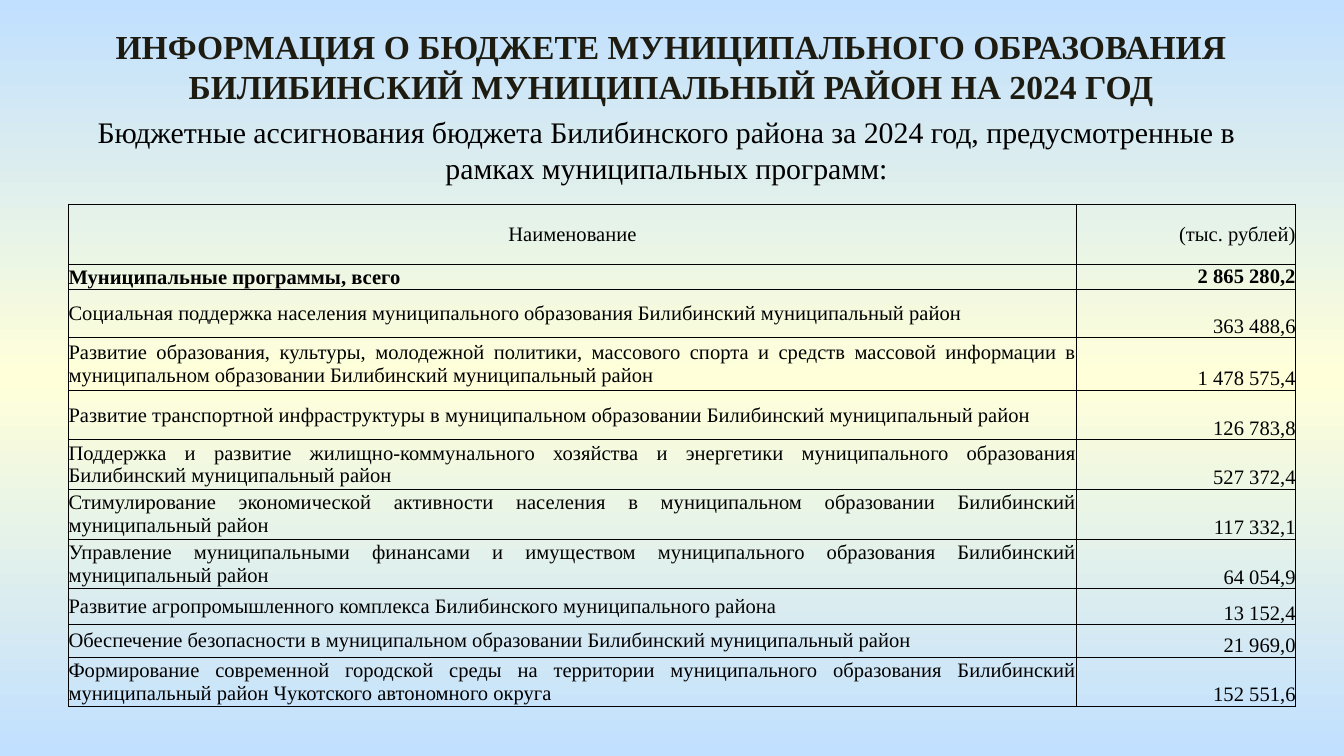
from copy import deepcopy

from lxml.etree import SubElement
from pptx import Presentation
from pptx.dml.color import RGBColor
from pptx.enum.text import MSO_ANCHOR as ANCHOR, MSO_AUTO_SIZE as AUTO, PP_ALIGN as AL
from pptx.oxml.ns import qn
from pptx.util import Inches, Pt

# Content
TITLE = ("ИНФОРМАЦИЯ О БЮДЖЕТЕ МУНИЦИПАЛЬНОГО ОБРАЗОВАНИЯ "
         "БИЛИБИНСКИЙ МУНИЦИПАЛЬНЫЙ РАЙОН НА 2024 ГОД")
SUBTITLE = ("Бюджетные ассигнования бюджета Билибинского района за 2024 год, "
            "предусмотренные в рамках муниципальных программ:")
HEADER = ("Наименование", "(тыс. рублей)", 0.45)
TOTAL = ("Муниципальные программы, всего", "2 865 280,2", 0.18)
# Programme, amount, row height
PROGRAMMES = [
    ("Социальная поддержка населения муниципального образования "
     "Билибинский муниципальный район", "363 488,6", 0.36),
    ("Развитие образования, культуры, молодежной политики, массового спорта и средств "
     "массовой информации в муниципальном образовании Билибинский муниципальный район",
     "1 478 575,4", 0.39),
    ("Развитие транспортной инфраструктуры в муниципальном образовании "
     "Билибинский муниципальный район", "126 783,8", 0.37),
    ("Поддержка и развитие жилищно-коммунального хозяйства и энергетики муниципального "
     "образования Билибинский муниципальный район", "527 372,4", 0.34),
    ("Стимулирование экономической активности населения в муниципальном образовании "
     "Билибинский муниципальный район", "117 332,1", 0.37),
    ("Управление муниципальными финансами и имуществом муниципального образования "
     "Билибинский муниципальный район", "64 054,9", 0.37),
    ("Развитие агропромышленного комплекса Билибинского муниципального района",
     "13 152,4", 0.27),
    ("Обеспечение безопасности в муниципальном образовании "
     "Билибинский муниципальный район", "21 969,0", 0.24),
    ("Формирование современной городской среды на территории муниципального образования "
     "Билибинский муниципальный район Чукотского автономного округа", "152 551,6", 0.24),
]
COL_WIDTHS = (7.5, 1.63)
FONT, BLACK, TITLE_COLOR = "Times New Roman", "000000", "1E1C11"
SKY, CREAM = "C1E0FF", "FFFFD9"


def rgb(value):
    return RGBColor.from_string(value)


def write(tf, text, size, align, color=BLACK, bold=False):
    tf.text = text
    tf.word_wrap = True
    p = tf.paragraphs[0]
    p.alignment = align
    font = p.runs[0].font
    font.name, font.size, font.bold = FONT, Pt(size), bold
    font.color.rgb = rgb(color)


def add_borders(cell):
    """Thin black line on every side; borders precede the fill in tcPr."""
    tc_pr = cell._tc.get_or_add_tcPr()
    for i, side in enumerate(("a:lnL", "a:lnR", "a:lnT", "a:lnB")):
        ln = SubElement(tc_pr, qn(side), w=str(Pt(0.5)))
        tc_pr.insert(i, ln)
        fill = SubElement(ln, qn("a:solidFill"))
        SubElement(fill, qn("a:srgbClr"), val=BLACK)


def set_cell(cell, text, align, anchor, bold):
    write(cell.text_frame, text, 11, align, bold=bold)
    cell.vertical_anchor = anchor
    cell.margin_left = cell.margin_right = cell.margin_top = cell.margin_bottom = 0
    cell.fill.background()
    add_borders(cell)


# Widescreen 16:9 slide
prs = Presentation()
prs.slide_width = Inches(10)
prs.slide_height = prs.slide_width * 9 // 16
s = prs.slides.add_slide(prs.slide_layouts[5])

# Background: sky, cream, sky from top to bottom
fill = s.background.fill
fill.gradient()
fill.gradient_angle = 270
for stop, position in zip(fill.gradient_stops, (0, 1)):
    stop.color.rgb = rgb(SKY)
    stop.position = position
stop_list = s.background._cSld.find(".//" + qn("a:gsLst"))
stop_list.insert(1, deepcopy(stop_list[0]))
middle = fill.gradient_stops[1]
middle.color.rgb = rgb(CREAM)
middle.position = 0.5

# Title and subtitle
title = s.shapes.title
title.left, title.top, title.width, title.height = map(Inches, (0.35, 0.14, 9.29, 0.71))
write(title.text_frame, TITLE, 18, AL.CENTER, TITLE_COLOR, True)
title.text_frame.vertical_anchor = ANCHOR.TOP
subtitle = s.shapes.add_textbox(*map(Inches, (0.31, 0.8, 9.3, 0.64)))
write(subtitle.text_frame, SUBTITLE, 16, AL.CENTER)
for sp in (title, subtitle):
    sp.text_frame.auto_size = AUTO.SHAPE_TO_FIT_TEXT

# Budget table
rows = [HEADER, TOTAL] + PROGRAMMES
frame = s.shapes.add_table(len(rows), len(COL_WIDTHS), Inches(0.51), Inches(1.52),
                           Inches(sum(COL_WIDTHS)), Inches(sum(row[2] for row in rows)))
table = frame.table
table.first_row = table.horz_banding = False
for column, width in zip(table.columns, COL_WIDTHS):
    column.width = Inches(width)
styles = {0: (AL.CENTER, ANCHOR.MIDDLE), 1: (AL.LEFT, ANCHOR.TOP)}
for i, (name, amount, height) in enumerate(rows):
    table.rows[i].height = Inches(height)
    name_align, amount_anchor = styles.get(i, (AL.JUSTIFY, ANCHOR.BOTTOM))
    bold = i == 1
    set_cell(table.cell(i, 0), name, name_align, ANCHOR.MIDDLE, bold)
    set_cell(table.cell(i, 1), amount, AL.RIGHT, amount_anchor, bold)

prs.save("out.pptx")
